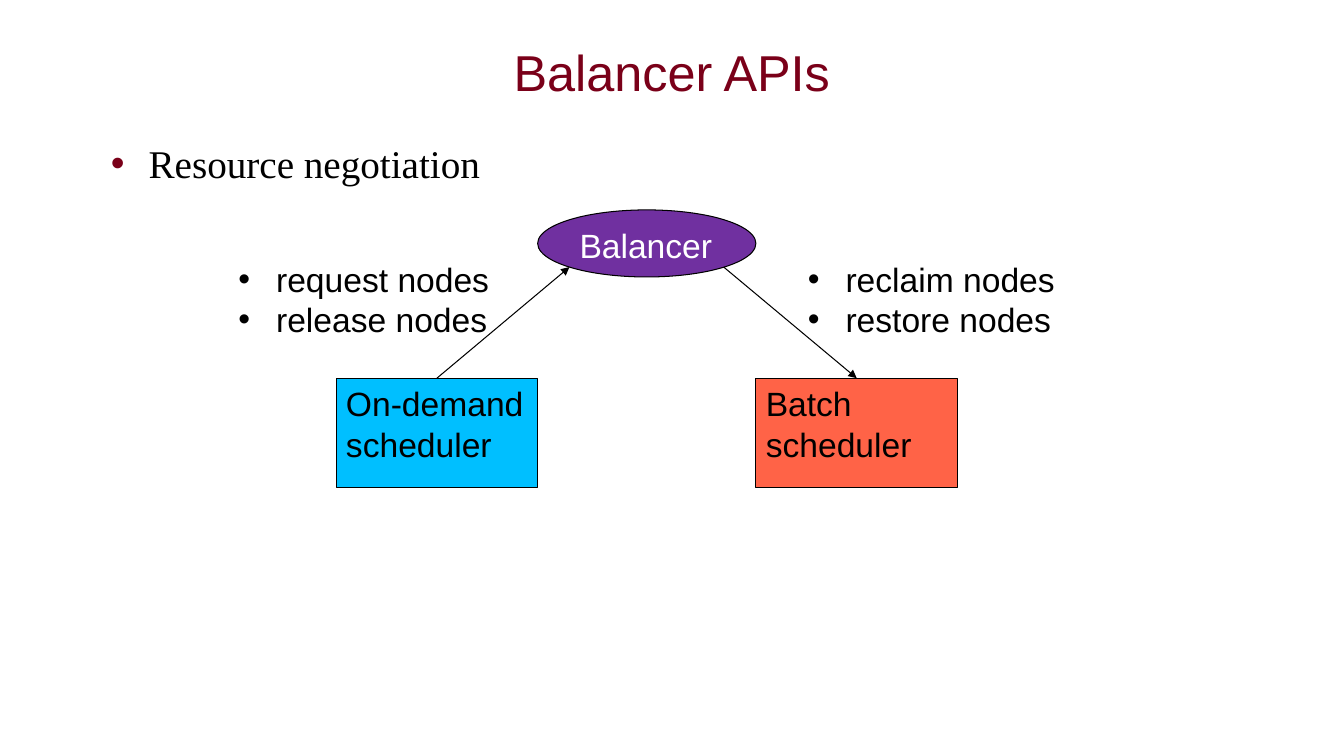
from lxml import etree
from pptx import Presentation
from pptx import util as u
from pptx.dml import color
from pptx.enum import shapes, text
from pptx.oxml import ns

MAROON, BLACK, WHITE = "7A0019", "000000", "FFFFFF"
LABEL = {"name": "Arial", "size": u.Pt(24)}
TOP = 9.53  # upper edge of both schedulers
DOCK = 6.73  # height where arrows meet the oval


def rgb(code):
    return color.RGBColor.from_string(code)


def place(shape, box):
    for key, val in zip(("left", "top", "width", "height"), box):
        setattr(shape, key, u.Cm(val))


def sub(parent, tag, **attrs):
    return etree.SubElement(parent, ns.qn(tag), attrs)


def bullet(para, hue):
    props = para._p.get_or_add_pPr()
    props.set("marL", str(u.Cm(0.95)))
    props.set("indent", str(u.Cm(-0.95)))
    sub(sub(props, "a:buClr"), "a:srgbClr", val=hue)
    sub(props, "a:buFont", typeface="Arial")
    sub(props, "a:buChar", char="•")


def write(shape, lines, style, hue=BLACK, align="LEFT", anchor="TOP", dot=None):
    """Fill a shape with formatted lines; dot is the bullet colour."""
    frame = shape.text_frame
    form = {
        "word_wrap": True,
        "auto_size": text.MSO_AUTO_SIZE.NONE,
        "vertical_anchor": text.MSO_ANCHOR[anchor],
    }
    for key, val in form.items():
        setattr(frame, key, val)
    frame.text = "\n".join(lines)
    for para in frame.paragraphs:
        para.alignment = text.PP_ALIGN[align]
        para.space_before = u.Pt(0)
        if dot:
            bullet(para, dot)
        font = para.runs[0].font
        for key, val in style.items():
            setattr(font, key, val)
        font.color.rgb = rgb(hue)


def stroke(line):
    line.color.rgb = rgb(BLACK)
    line.width = u.Pt(0.75)


def node(slide, kind, box, fill, label, hue=BLACK):
    shape = slide.shapes.add_shape(kind, *map(u.Cm, box))
    shape.shadow.inherit = False
    shape.fill.solid()
    shape.fill.fore_color.rgb = rgb(fill)
    stroke(shape.line)
    write(shape, [label], LABEL, hue)
    return shape


def arrow(slide, start, end):
    line = slide.shapes.add_connector(
        shapes.MSO_CONNECTOR.STRAIGHT, *map(u.Cm, start + end)
    )
    stroke(line.line)
    sub(line.line._get_or_add_ln(), "a:tailEnd", type="triangle")
    sub(line._element.spPr, "a:effectLst")
    return line


def calls(slide, left, lines):
    box = slide.shapes.add_textbox(*map(u.Cm, (left, 6.4, 6.92, 2.31)))
    write(box, lines, LABEL, dot=BLACK)


def main():
    deck = Presentation()
    deck.slide_width, deck.slide_height = u.Cm(33.87), u.Cm(19.05)
    slide = deck.slides.add_slide(deck.slide_layouts[1])

    title, body = slide.placeholders
    place(title, (2.54, 0.85, 28.78, 1.9))
    write(title, ["Balancer APIs"], {"name": "Arial", "size": u.Pt(36)},
          MAROON, "CENTER", "MIDDLE")
    place(body, (2.54, 3.39, 28.78, 12.49))
    write(body, ["Resource negotiation"],
          {"name": "Times New Roman", "size": u.Pt(28)}, dot=MAROON)

    rect, oval = shapes.MSO_SHAPE.RECTANGLE, shapes.MSO_SHAPE.OVAL
    batch = node(slide, rect, (19.05, TOP, 5.08, 2.75), "FF6347",
                 "Batch scheduler")
    demand = node(slide, rect, (8.47, TOP, 5.08, 2.75), "00BFFF",
                  "On-demand scheduler")
    node(slide, oval, (13.55, 5.29, 5.5, 1.69), "7030A0", "Balancer", WHITE)

    rise = arrow(slide, (11.01, TOP), (14.35, DOCK))
    rise.begin_connect(demand, 0)
    fall = arrow(slide, (18.24, DOCK), (21.59, TOP))
    fall.end_connect(batch, 0)

    calls(slide, 5.76, ["request nodes", "release nodes"])
    calls(slide, 20.11, ["reclaim nodes", "restore nodes"])
    deck.save("out.pptx")


if __name__ == "__main__":
    main()
